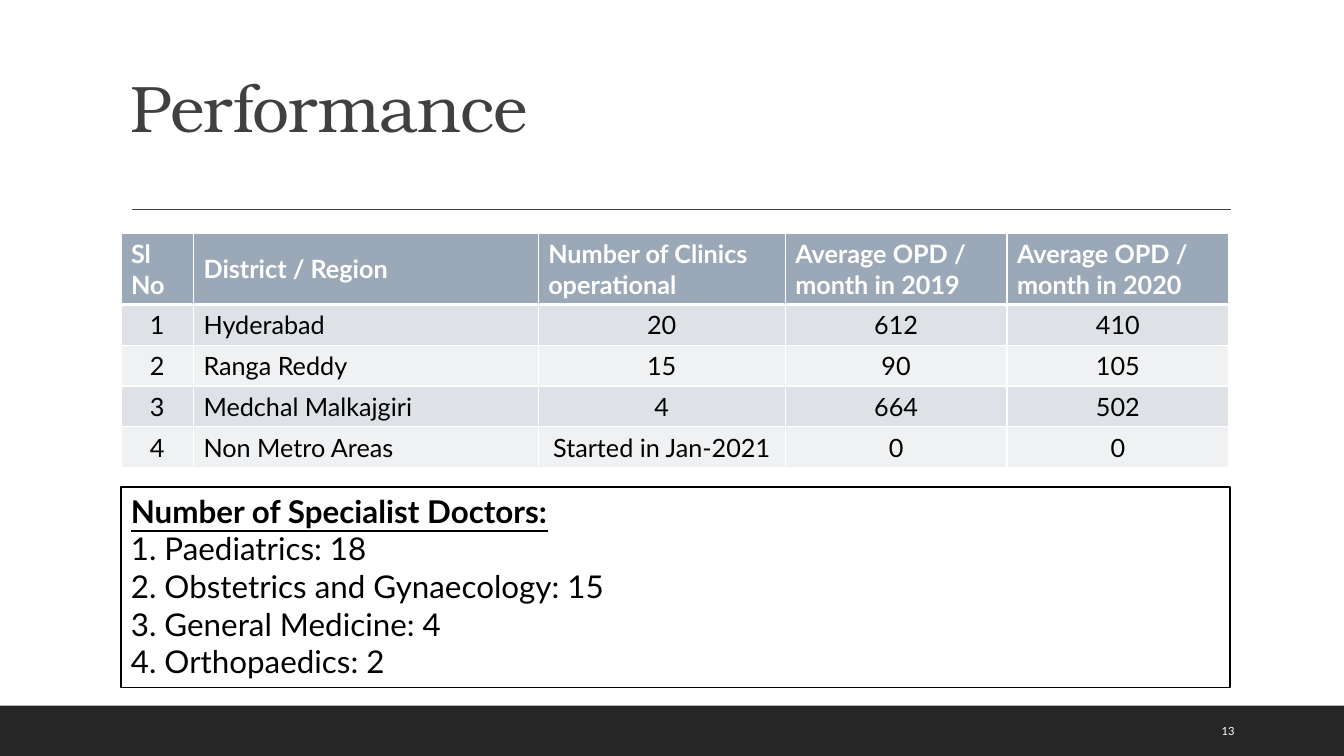
from lxml import etree
from pptx import Presentation, util as u
from pptx.dml.color import RGBColor
from pptx.enum import shapes, text
from pptx.oxml import ns

COLUMN = ROW = u.Inches(0.1)
SLIDE_COLUMNS, SLIDE_ROWS = 133.33, 75
LEFT, WIDTH = 12, 110

WHITE = RGBColor(0xFF, 0xFF, 0xFF)
BLACK = RGBColor(0, 0, 0)
CHARCOAL = RGBColor(0x40, 0x40, 0x40)
FOOTER_DARK = RGBColor(0x26, 0x26, 0x26)
HEADER_SLATE = RGBColor(0x9B, 0xA8, 0xB7)
BANDS = (RGBColor(0xDE, 0xE1, 0xE6), RGBColor(0xEF, 0xF1, 0xF3))

HEADINGS = ("Sl No", "District / Region", "Number of Clinics operational",
            "Average OPD / month in 2019", "Average OPD / month in 2020")
DISTRICTS = (
    ("Hyderabad", "20", "612", "410"),
    ("Ranga Reddy", "15", "90", "105"),
    ("Medchal Malkajgiri", "4", "664", "502"),
    ("Non Metro Areas", "Started in Jan-2021", "0", "0"),
)
TABLE_COLUMNS = (7.2, 34.2, 24.5, 22, 22)
HEADING_ROWS, DISTRICT_ROWS = 7, 4.05
SPECIALISTS = (("Paediatrics", 18), ("Obstetrics and Gynaecology", 15),
               ("General Medicine", 4), ("Orthopaedics", 2))


def grid(left, top, width, height):
    return (int(left * COLUMN), int(top * ROW),
            int(width * COLUMN), int(height * ROW))


def write(paragraph, words, size=18, font="Lato", color=BLACK, bold=False,
          underline=False, align=text.PP_ALIGN.LEFT, line_spacing=None, tracking=None):
    paragraph.alignment = align
    if line_spacing:
        paragraph.line_spacing = line_spacing
    run = paragraph.add_run()
    run.text = words
    run.font.size = u.Pt(size)
    run.font.name = font
    run.font.bold = bold
    run.font.underline = underline
    run.font.color.rgb = color
    if tracking is not None:
        run.font._element.set("spc", str(int(tracking * 100)))


def add_label(slide, area, words, **style):
    frame = slide.shapes.add_textbox(*grid(*area)).text_frame
    frame.word_wrap = True
    frame.vertical_anchor = text.MSO_ANCHOR.MIDDLE
    write(frame.paragraphs[0], words, **style)


def add_panel(slide, area, fill, outline=None):
    panel = slide.shapes.add_shape(shapes.MSO_SHAPE.RECTANGLE, *grid(*area))
    panel.shadow.inherit = False
    panel.fill.solid()
    panel.fill.fore_color.rgb = fill
    if outline is None:
        panel.line.fill.background()
    else:
        panel.line.color.rgb = outline
        panel.line.width = u.Pt(1.25)
    return panel


def add_rule(slide, left, right, top):
    start_x, y, end_x, _ = grid(left, top, right, 0)
    rule = slide.shapes.add_connector(shapes.MSO_CONNECTOR.STRAIGHT, start_x, y, end_x, y)
    rule.line.color.rgb = CHARCOAL
    rule.line.width = u.Pt(1)
    etree.SubElement(rule._element.spPr, ns.qn("a:effectLst"))


def border_cell(cell, **widths):
    properties = cell._tc.get_or_add_tcPr()
    for side in "LRTB":
        edge = etree.SubElement(properties, ns.qn(f"a:ln{side}"),
                                w=str(u.Pt(widths.get(side, 1))))
        paint = etree.SubElement(edge, ns.qn("a:solidFill"))
        etree.SubElement(paint, ns.qn("a:srgbClr"), val=str(WHITE))


def fill_cell(cell, words, fill, borders, **style):
    border_cell(cell, **borders)
    cell.fill.solid()
    cell.fill.fore_color.rgb = fill
    cell.vertical_anchor = text.MSO_ANCHOR.MIDDLE
    write(cell.text_frame.paragraphs[0], words, **style)


def add_clinic_table(slide, top):
    height = HEADING_ROWS + DISTRICT_ROWS * len(DISTRICTS)
    table = slide.shapes.add_table(len(DISTRICTS) + 1, len(HEADINGS),
                                   *grid(LEFT, top, WIDTH, height)).table
    for column, width in zip(table.columns, TABLE_COLUMNS):
        column.width = int(width * COLUMN)
    for index, row in enumerate(table.rows):
        row.height = int((DISTRICT_ROWS if index else HEADING_ROWS) * ROW)
    for column, heading in enumerate(HEADINGS):
        fill_cell(table.cell(0, column), heading, HEADER_SLATE, {"B": 3},
                  color=WHITE, bold=True)
    for number, district in enumerate(DISTRICTS, 1):
        borders = {"T": 3} if number == 1 else {}
        for column, value in enumerate((str(number), *district)):
            align = text.PP_ALIGN.LEFT if column == 1 else text.PP_ALIGN.CENTER
            fill_cell(table.cell(number, column), value, BANDS[(number - 1) % 2],
                      borders, align=align)


def add_specialists(slide, area):
    frame = add_panel(slide, area, WHITE, BLACK).text_frame
    frame.word_wrap = True
    frame.vertical_anchor = text.MSO_ANCHOR.TOP
    write(frame.paragraphs[0], "Number of Specialist Doctors:", size=22.4,
          bold=True, underline=True)
    for number, (specialty, doctors) in enumerate(SPECIALISTS, 1):
        write(frame.add_paragraph(), f"{number}. {specialty}: {doctors}", size=22.4)


def main():
    deck = Presentation()
    deck.slide_width = int(SLIDE_COLUMNS * COLUMN)
    deck.slide_height = SLIDE_ROWS * ROW
    slide = deck.slides.add_slide(deck.slide_layouts[6])
    add_panel(slide, (0, 70, SLIDE_COLUMNS, 5), FOOTER_DARK)
    add_rule(slide, 13.1, 122.1, 20.8)
    add_label(slide, (LEFT, 3.1, WIDTH, 15.9), "Performance", size=47,
              font="TeX Gyre Bonum", color=CHARCOAL, line_spacing=0.9, tracking=-0.5)
    add_clinic_table(slide, 23.2)
    add_specialists(slide, (LEFT, 48.3, WIDTH, 19.9))
    add_label(slide, (120.2, 70.5, 8.5, 4), "13", size=8, color=WHITE)
    deck.save("out.pptx")


if __name__ == "__main__":
    main()
